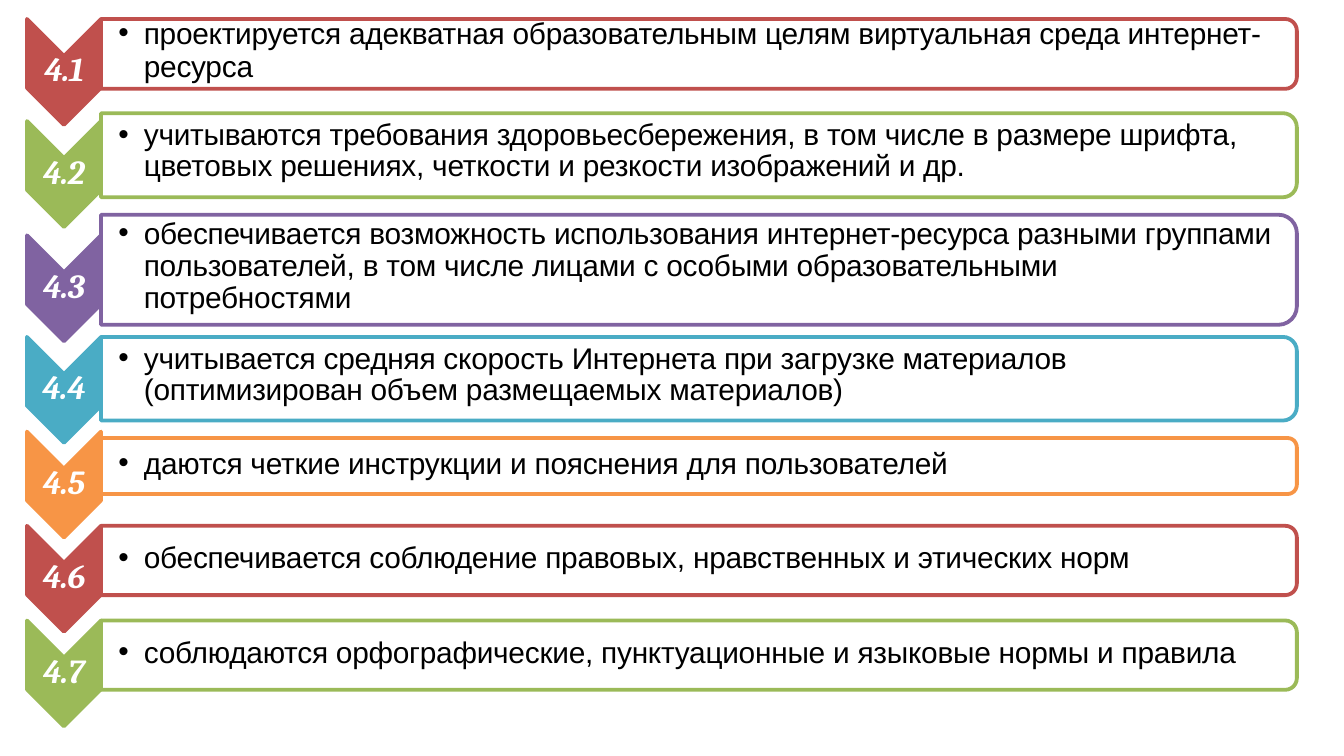
import math

from lxml import etree
from pptx import Presentation
from pptx.dml.color import RGBColor
from pptx.enum import text
from pptx.oxml import ns
from pptx.util import Cm, Pt

RED, GREEN, PURPLE, BLUE, ORANGE = "C0504D", "9BBA58", "8063A1", "4AACC5", "F79546"
WHITE, BLACK = "FFFFFF", "000000"

# number, colour, arrow top, frame top, frame height (cm), line spacing (pt), lines
CRITERIA = [
    ("4.1", RED, 0.36, 0.36, 1.32, 17.9,
     ["проектируется адекватная образовательным целям виртуальная среда интернет-ресурса"]),
    ("4.2", GREEN, 2.29, 2.14, 1.59, 16.6,
     ["учитываются требования здоровьесбережения, в том числе в размере шрифта, "
      "цветовых решениях, четкости и резкости изображений и др."]),
    ("4.3", PURPLE, 4.45, 4.06, 2.08, 17.25,
     ["обеспечивается возможность использования интернет-ресурса разными группами "
      "пользователей, в том числе лицами с особыми образовательными",
      "потребностями"]),
    ("4.4", BLUE, 6.37, 6.37, 1.58, 16.6,
     ["учитывается средняя скорость Интернета при загрузке материалов "
      "(оптимизирован объем размещаемых материалов)"]),
    ("4.5", ORANGE, 8.16, 8.28, 1.06, None,
     ["даются четкие инструкции и пояснения для пользователей"]),
    ("4.6", RED, 9.94, 9.94, 1.31, None,
     ["обеспечивается соблюдение правовых, нравственных и этических норм"]),
    ("4.7", GREEN, 11.73, 11.73, 1.31, None,
     ["соблюдаются орфографические, пунктуационные и языковые нормы и правила"]),
]

ARROW_LEFT, ARROW_WIDTH, ARROW_HEIGHT, NOTCH = 0.51, 1.4, 2.0, 0.7
FRAME_LEFT = ARROW_LEFT + ARROW_WIDTH
FRAME_RIGHT = 24.51
CORNER_SHARE = 1 / 6
LETTER_SPACING = "-10"


def colour(value):
    return RGBColor.from_string(value)


def arrow_points(top):
    left, middle, right = (ARROW_LEFT + ARROW_WIDTH * part for part in (0, 0.5, 1))
    shoulder = top + ARROW_HEIGHT - NOTCH
    return [(left, top), (middle, top + NOTCH), (right, top),
            (right, shoulder), (middle, top + ARROW_HEIGHT), (left, shoulder)]


def frame_points(top, height):
    """Rectangle with only its two right corners rounded."""
    radius = height * CORNER_SHARE
    centre_x = FRAME_RIGHT - radius
    points = [(FRAME_LEFT, top)]
    for centre_y, start in ((top + radius, -90), (top + height - radius, 0)):
        for step in range(0, 91, 15):
            angle = math.radians(start + step)
            points.append((centre_x + radius * math.cos(angle),
                           centre_y + radius * math.sin(angle)))
    return points + [(FRAME_LEFT, top + height)]


def add_outline(page, points, fill, line):
    points = [(Cm(x), Cm(y)) for x, y in points]
    builder = page.shapes.build_freeform(*points[0])
    builder.add_line_segments(points[1:], close=True)
    shape = builder.convert_to_shape()
    shape.shadow.inherit = False
    shape.fill.solid()
    shape.fill.fore_color.rgb = colour(fill)
    shape.line.color.rgb = colour(line)
    shape.line.width = Pt(2.04)
    return shape


def prepare_text(shape, left, right, bottom, align):
    """Centre the text vertically, set the insets and return the first paragraph."""
    frame = shape.text_frame
    frame.word_wrap = True
    frame.vertical_anchor = text.MSO_ANCHOR.MIDDLE
    frame.margin_left, frame.margin_right = Cm(left), Cm(right)
    frame.margin_top, frame.margin_bottom = Cm(0), Cm(bottom)
    para = frame.paragraphs[0]
    para.alignment = align
    return para


def add_span(para, words, name, size, value, strong=False):
    span = para.add_run()
    span.text = words
    span.font.name = name
    span.font.size = Pt(size)
    span.font.bold = span.font.italic = strong
    span.font.color.rgb = colour(value)
    span._r.get_or_add_rPr().set("spc", LETTER_SPACING)


def add_bullet(para):
    props = para._p.get_or_add_pPr()
    props.set("marL", str(Cm(0.53)))
    props.set("indent", str(Cm(-0.48)))
    etree.SubElement(props, ns.qn("a:buFont")).set("typeface", "Arial")
    etree.SubElement(props, ns.qn("a:buChar")).set("char", "•")


deck = Presentation()
deck.slide_width, deck.slide_height = Cm(25.4), Cm(14.29)
page = deck.slides.add_slide(deck.slide_layouts[6])

for number, tint, arrow_top, frame_top, height, spacing, lines in CRITERIA:
    arrow = add_outline(page, arrow_points(arrow_top), tint, tint)
    para = prepare_text(arrow, 0, 0, 0.13, text.PP_ALIGN.CENTER)
    add_span(para, number, "Cambria", 18, WHITE, strong=True)

    box = add_outline(page, frame_points(frame_top, height), WHITE, tint)
    para = prepare_text(box, 0.28, 0.25, 0.13, text.PP_ALIGN.LEFT)
    add_bullet(para)
    if spacing:
        para.line_spacing = Pt(spacing)
    for index, words in enumerate(lines):
        if index:
            para.add_line_break()
        add_span(para, words, "Arial", 16, BLACK)

deck.save("out.pptx")
